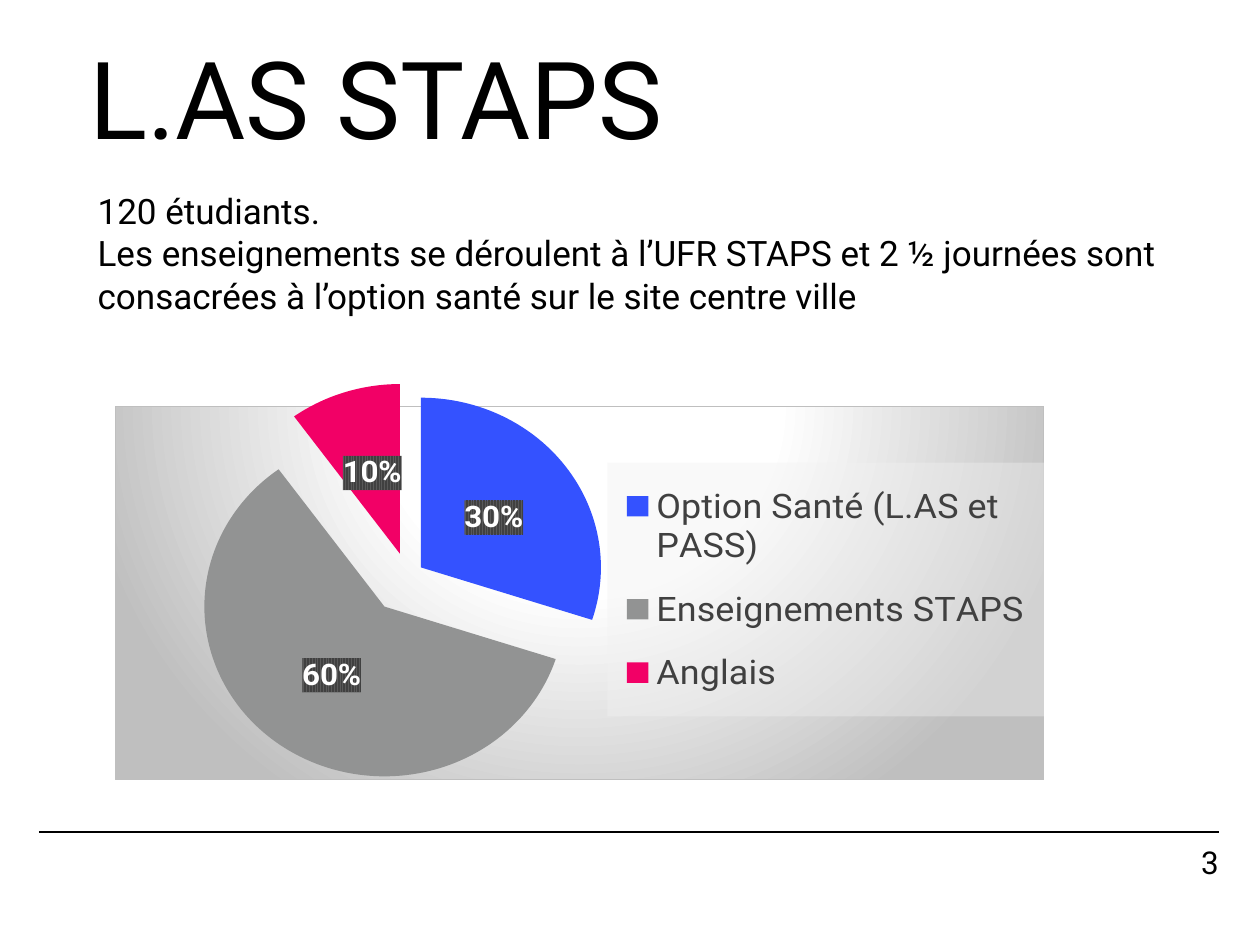
from pptx import Presentation
from pptx.chart.data import CategoryChartData
from pptx.dml.color import RGBColor
from pptx.enum.chart import XL_CHART_TYPE, XL_LABEL_POSITION, XL_LEGEND_POSITION
from pptx.enum.shapes import MSO_CONNECTOR
from pptx.enum.text import MSO_ANCHOR, MSO_AUTO_SIZE, PP_ALIGN
from pptx.oxml import parse_xml
from pptx.oxml.ns import nsdecls, qn
from pptx.util import Cm, Pt

FONT = "Roboto"
SHARES = [  # category, percent, colour, explosion
    ("Option Santé (L.AS et PASS)", 30, "3452FF", 9),
    ("Enseignements STAPS", 60, "929393", 22),
    ("Anglais", 10, "F20066", 14),
]


def rgb(value):
    return RGBColor.from_string(value)


def set_font(font, size, color="000000", bold=False):
    font.name, font.size, font.bold = FONT, Pt(size), bold
    font.color.rgb = rgb(color)


def add_text(s, box, lines, size, margins=(0, 0), align=PP_ALIGN.LEFT,
             anchor=MSO_ANCHOR.TOP, spacing=None):
    tf = s.shapes.add_textbox(*map(Cm, box)).text_frame
    tf.word_wrap = True
    tf.auto_size = MSO_AUTO_SIZE.SHAPE_TO_FIT_TEXT
    tf.vertical_anchor = anchor
    tf.margin_left = tf.margin_right = Cm(margins[0])
    tf.margin_top = tf.margin_bottom = Cm(margins[1])
    for i, line in enumerate(lines):
        p = tf.paragraphs[0] if i == 0 else tf.add_paragraph()
        p.text, p.alignment, p.line_spacing = line, align, spacing
        set_font(p.font, size)


def shape_props(content):
    return parse_xml(f'<c:spPr {nsdecls("c", "a")}>{content}</c:spPr>')


def manual_layout(x, y, w, h, inner=False):
    target = '<c:layoutTarget val="inner"/>' if inner else ""
    return parse_xml(
        f'<c:layout {nsdecls("c")}><c:manualLayout>{target}'
        '<c:xMode val="edge"/><c:yMode val="edge"/>'
        f'<c:x val="{x}"/><c:y val="{y}"/><c:w val="{w}"/><c:h val="{h}"/>'
        '</c:manualLayout></c:layout>')


def add_header(s, left, top, width):
    add_text(s, (left, top, width, 3.68), ["L.AS STAPS"], 96, spacing=0.9)


def add_intro(s, left, top, width):
    add_text(s, (left, top, width, 4.27), [
        "120 étudiants.",
        "Les enseignements se déroulent à l’UFR STAPS et 2 ½ journées sont "
        "consacrées à l’option santé sur le site centre ville",
    ], 31.2, margins=(0.25, 0.13))


def add_share_chart(s, left, top, width, height):
    data = CategoryChartData()
    data.categories = [share[0] for share in SHARES]
    data.add_series("Series 1", [share[1] for share in SHARES])
    chart = s.shapes.add_chart(XL_CHART_TYPE.PIE, Cm(left), Cm(top),
                               Cm(width), Cm(height), data).chart
    chart.has_title = False
    set_font(chart.font, 10)

    # Slices
    plot = chart.plots[0]
    plot.vary_by_categories = True
    for i, (_, _, color, explosion) in enumerate(SHARES):
        point = plot.series[0].points[i]
        point.format.fill.solid()
        point.format.fill.fore_color.rgb = rgb(color)
        point.format.line.fill.background()
        slice_xml = plot.series[0].points[i]._ser.findall(qn("c:dPt"))[i]
        slice_xml.find(qn("c:spPr")).addprevious(
            parse_xml(f'<c:explosion {nsdecls("c")} val="{explosion}"/>'))

    # Percent labels on a dark striped ground
    plot.has_data_labels = True
    labels = plot.data_labels
    labels.show_percentage, labels.show_value = True, False
    labels.number_format, labels.number_format_is_linked = "0%", False
    labels.position = XL_LABEL_POSITION.CENTER
    set_font(labels.font, 28, "FFFFFF", bold=True)
    labels._element.find(qn("c:txPr")).addprevious(shape_props(
        '<a:pattFill prst="narVert"><a:fgClr><a:srgbClr val="404040"/></a:fgClr>'
        '<a:bgClr><a:srgbClr val="595959"/></a:bgClr></a:pattFill>'))

    # Legend on a translucent ground
    chart.has_legend = True
    legend = chart.legend
    legend.position = XL_LEGEND_POSITION.RIGHT
    legend.include_in_layout = False
    set_font(legend.font, 32, "404040")
    legend_xml = legend._element
    for old in legend_xml.findall(qn("c:layout")):
        legend_xml.remove(old)
    legend_xml.find(qn("c:overlay")).addprevious(
        manual_layout(0.53, 0.15, 0.47, 0.68))
    legend_xml.find(qn("c:txPr")).addprevious(shape_props(
        '<a:solidFill><a:srgbClr val="F2F2F2"><a:alpha val="39000"/>'
        '</a:srgbClr></a:solidFill>'))

    # Plot position and chart ground
    space = chart._chartSpace
    area = space.chart.plotArea
    for old in area.findall(qn("c:layout")):
        area.remove(old)
    area.insert(0, manual_layout(0, 0, 0.63, 0.91, inner=True))
    stops = "".join(
        f'<a:gs pos="{pos}000"><a:srgbClr val="{color}"/></a:gs>'
        for pos, color in ((0, "FFFFFF"), (39, "FFFFFF"), (100, "BFBFBF")))
    space.chart.addnext(shape_props(
        f'<a:gradFill><a:gsLst>{stops}</a:gsLst><a:path path="circle">'
        '<a:fillToRect l="50000" t="-80000" r="50000" b="180000"/></a:path>'
        '</a:gradFill><a:ln w="9525"><a:solidFill><a:srgbClr val="BFBFBF"/>'
        '</a:solidFill></a:ln>'))


def add_footer(s, left, top, width):
    line = s.shapes.add_connector(MSO_CONNECTOR.STRAIGHT, Cm(left), Cm(top),
                                  Cm(left + width), Cm(top))
    line.line.color.rgb = rgb("000000")
    line.line.width = Pt(2)
    line._element.spPr.append(parse_xml(f'<a:effectLst {nsdecls("a")}/>'))
    number_width = 5.8
    add_text(s, (left + width - number_width, top + 0.33, number_width, 1.19),
             ["3"], 28, align=PP_ALIGN.RIGHT, anchor=MSO_ANCHOR.MIDDLE)


def main():
    prs = Presentation()
    prs.slide_width, prs.slide_height = Cm(39.6), Cm(29.7)
    s = prs.slides.add_slide(prs.slide_layouts[6])
    add_footer(s, 1.22, 26.16, 37.08)
    add_header(s, 2.8, 1.45, 30.8)
    add_intro(s, 2.82, 5.84, 34.93)
    add_share_chart(s, 3.61, 12.07, 29.21, 12.45)
    prs.save("out.pptx")


if __name__ == "__main__":
    main()
